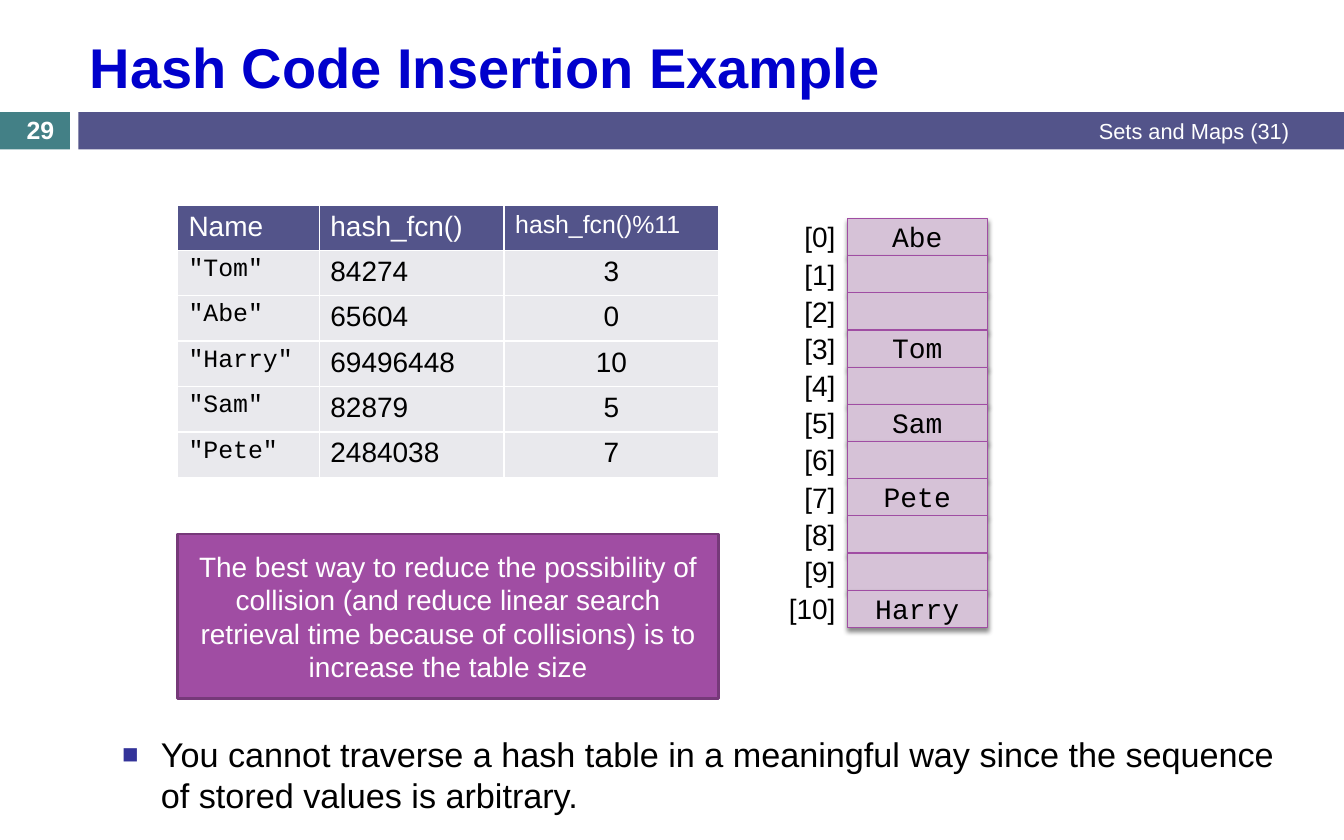
import pptx
import pptx.dml.color
import pptx.enum.shapes
import pptx.enum.text
import pptx.oxml
import pptx.oxml.ns
import pptx.util

Pt = pptx.util.Pt
Align = pptx.enum.text.PP_ALIGN
Anchor = pptx.enum.text.MSO_ANCHOR
CODES = {"Tom": 84274, "Abe": 65604, "Harry": 69496448, "Sam": 82879, "Pete": 2484038}
SIZE = 11
SLOT_TOP, SLOT_STEP = 140.4, 23.9


def rgb(code):
    """Return the colour for a hex string."""
    return pptx.dml.color.RGBColor.from_string(code)


def xml(tag, body):
    """Return a drawing element with the given attributes and content."""
    return pptx.oxml.parse_xml(f"<a:{tag} {pptx.oxml.ns.nsdecls('a')} {body}")


def write(frame, text, size, color="000000", font="Arial", bold=False, align=Align.LEFT):
    """Put one styled paragraph into a text frame."""
    frame.text = text
    para = frame.paragraphs[0]
    para.alignment = align
    for run in para.runs:
        run.font.name, run.font.size, run.font.bold = font, Pt(size), bold
        run.font.color.rgb = rgb(color)


def place(shape, left, top, width, height):
    """Move and size a shape."""
    shape.left, shape.top = Pt(left), Pt(top)
    shape.width, shape.height = Pt(width), Pt(height)


def add_box(slide, left, top, width, height, fill, line=None, weight=1):
    """Add a flat rectangle."""
    kind = pptx.enum.shapes.MSO_SHAPE.RECTANGLE
    box = slide.shapes.add_shape(kind, Pt(left), Pt(top), Pt(width), Pt(height))
    box.shadow.inherit = False
    box.fill.solid()
    box.fill.fore_color.rgb = rgb(fill)
    if line:
        box.line.color.rgb = rgb(line)
        box.line.width = Pt(weight)
    else:
        box.line.fill.background()
    return box


def add_text(slide, left, top, width, height, text, size, wrap=True, anchor=Anchor.TOP, **style):
    """Add a text box."""
    box = slide.shapes.add_textbox(Pt(left), Pt(top), Pt(width), Pt(height))
    frame = box.text_frame
    frame.word_wrap = wrap
    frame.vertical_anchor = anchor
    write(frame, text, size, **style)


def add_shade(box):
    """Give a box a soft shadow below."""
    glow = xml("outerShdw", f'blurRad="{Pt(3)}" dist="{Pt(2.4)}" dir="5400000" rotWithShape="0">'
               '<a:srgbClr val="000000"><a:alpha val="45000"/></a:srgbClr></a:outerShdw>')
    box._element.spPr.find(pptx.oxml.ns.qn("a:effectLst")).append(glow)


def add_codes(slide):
    """Add the table of names, hash codes and slots."""
    rows = [("Name", "hash_fcn()", f"hash_fcn()%{SIZE}")]
    rows += [(f'"{name}"', str(code), str(code % SIZE)) for name, code in CODES.items()]
    widths, heights = (91.2, 118.8, 138), [27] + [29.2] * len(CODES)
    table = slide.shapes.add_table(len(rows), 3, Pt(114), Pt(132), Pt(sum(widths)), Pt(sum(heights))).table
    for col, width in zip(table.columns, widths):
        col.width = Pt(width)
    for r, row in enumerate(rows):
        table.rows[r].height = Pt(heights[r])
        for c, text in enumerate(row):
            cell = table.cell(r, c)
            cell.fill.solid()
            cell.fill.fore_color.rgb = rgb("E9E9ED" if r else "53548A")
            small = c == 0 if r else c == 2
            write(cell.text_frame, text, 16 if small else 18, "000000" if r else "FFFFFF",
                  "Courier New" if r and c == 0 else "Arial",
                  align=Align.CENTER if r and c == 2 else Align.LEFT)


def add_slots(slide):
    """Add the hash table slots with index labels and stored names."""
    names = {code % SIZE: name for name, code in CODES.items()}
    for i in range(SIZE):
        top = SLOT_TOP + i * SLOT_STEP
        add_shade(add_box(slide, 545, top, 90, 24, "D6C2D7", "A04DA3", 0.79))
        label = f"[{i}]"
        width = 4.6 + 10 * len(label)
        add_text(slide, 544.6 - width, top - 2.6, width, 29, label, 18, wrap=False)
    for i, name in names.items():
        add_text(slide, 551.5, SLOT_TOP + i * SLOT_STEP - 2.9, 76.3, 29, name, 18,
                 font="Courier New", align=Align.CENTER)


def add_point(body, text):
    """Fill the body with one bulleted point."""
    place(body, 71.3, 468, 764.7, 64.8)
    frame = body.text_frame
    frame.auto_size = pptx.enum.text.MSO_AUTO_SIZE.NONE
    write(frame, text, 22)
    para = frame.paragraphs[0]
    para.space_before = Pt(7)
    props = para._p.get_or_add_pPr()
    props.set("marL", str(Pt(25)))
    props.set("indent", str(-Pt(25)))
    props.append(xml("buClr", '><a:srgbClr val="333399"/></a:buClr>'))
    props.append(xml("buSzPct", 'val="80000"/>'))
    props.append(xml("buFont", 'typeface="Arial"/>'))
    props.append(xml("buChar", 'char="■"/>'))


def main():
    """Build and save the slide."""
    deck = pptx.Presentation()
    deck.slide_width, deck.slide_height = Pt(864), Pt(540)
    slide = deck.slides.add_slide(deck.slide_layouts[1])

    title = slide.shapes.title
    place(title, 50.4, 13.7, 785.6, 57.6)
    title.text_frame.vertical_anchor = Anchor.MIDDLE
    write(title.text_frame, "Hash Code Insertion Example", 36, "0000CC", bold=True)

    add_box(slide, 0, 72, 45, 24, "438086")
    add_box(slide, 50.4, 72, 813.6, 24, "53548A")
    add_text(slide, 324, 71.3, 512, 25.2, "Sets and Maps (31)", 14,
             anchor=Anchor.MIDDLE, color="FFFFFF", align=Align.RIGHT)
    add_text(slide, 0, 72.7, 51.8, 21.6, "29", 16,
             anchor=Anchor.MIDDLE, color="FFFFFF", bold=True, align=Align.CENTER)

    add_codes(slide)
    add_slots(slide)

    note = add_box(slide, 114, 343.4, 348, 105.8, "A04DA3", "763979", 1.5)
    note.text_frame.word_wrap = True
    write(note.text_frame, "The best way to reduce the possibility of collision (and reduce linear "
          "search retrieval time because of collisions) is to increase the table size",
          18, "FFFFFF", align=Align.CENTER)
    add_point(slide.placeholders[1], "You cannot traverse a hash table in a meaningful way "
              "since the sequence of stored values is arbitrary.")
    deck.save("out.pptx")


if __name__ == "__main__":
    main()
